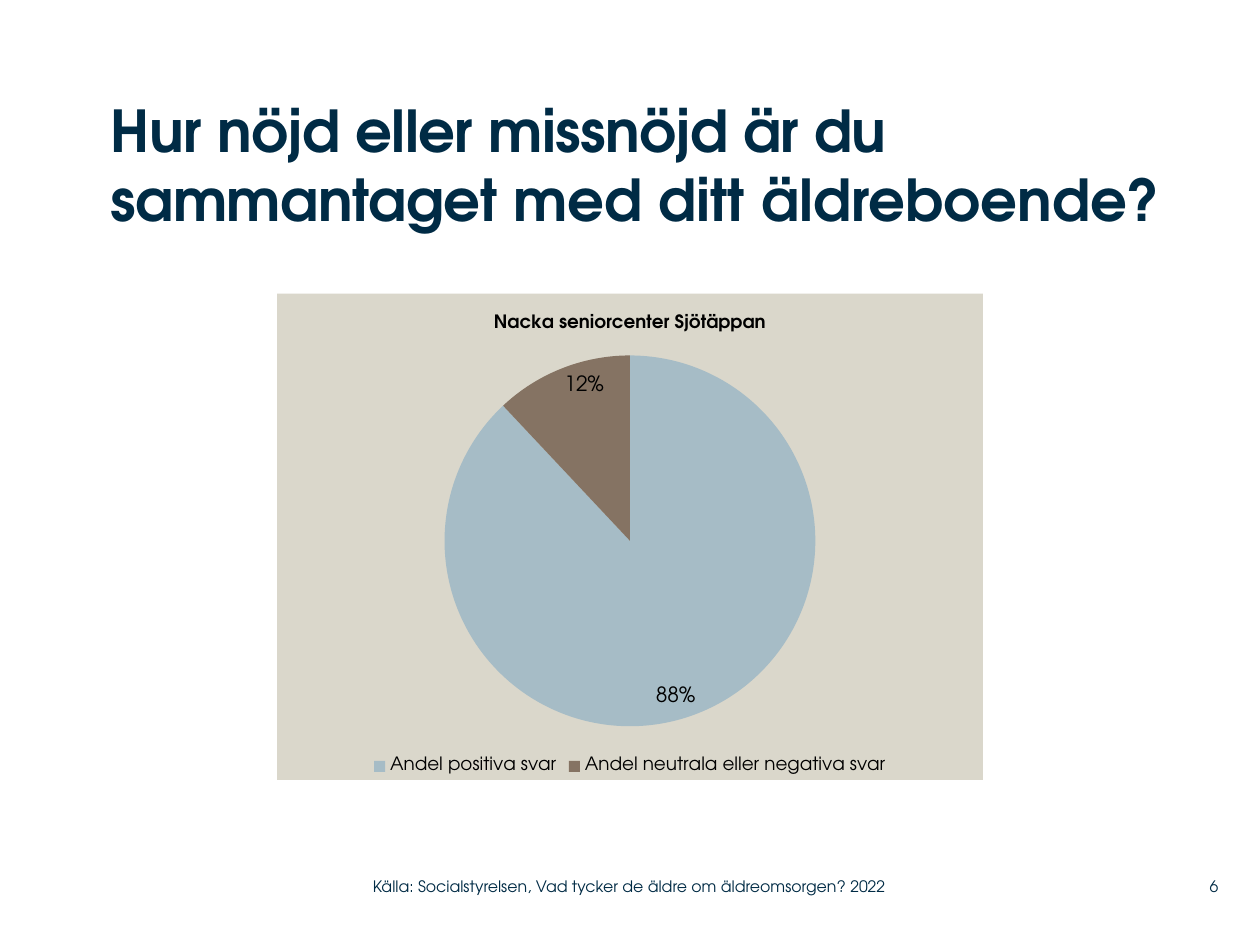
from pptx import Presentation
from pptx.chart.data import CategoryChartData
from pptx.dml.color import RGBColor
from pptx.enum.chart import XL_CHART_TYPE as ChartType, XL_LABEL_POSITION as LabelPos, XL_LEGEND_POSITION as LegendPos
from pptx.enum.text import MSO_ANCHOR as Anchor, MSO_AUTO_SIZE as AutoSize, PP_ALIGN as Align
from pptx.oxml import parse_xml
from pptx.oxml.ns import nsdecls
from pptx.util import Inches, Pt

FONT = "TeX Gyre Adventor"
COLORS = {"ink": "002B45", "black": "000000", "panel": "DAD7CB",
          "positive": "A6BCC6", "other": "857363"}
SLIDE_W, SLIDE_H = Inches(10), Inches(7.5)
FOOTER_TOP, FOOTER_H = Inches(6.89), Inches(0.29)


def color(name):
    return RGBColor.from_string(COLORS[name])


def style(font, size, name="ink", bold=False):
    font.name, font.size, font.bold = FONT, Pt(size), bold
    font.color.rgb = color(name)


def prepare(frame, anchor):
    frame.word_wrap, frame.auto_size = True, AutoSize.NONE
    frame.vertical_anchor = anchor
    frame.margin_left = frame.margin_right = frame.margin_top = frame.margin_bottom = 0


def add_run(paragraph, text, size, **look):
    run = paragraph.add_run()
    run.text = text
    style(run.font, size, **look)
    return run


def fill_title(title):
    title.left, title.top = Inches(0.88), SLIDE_H // 10
    title.width, title.height = Inches(8.83), Inches(1.42)
    prepare(title.text_frame, Anchor.TOP)
    heading = title.text_frame.paragraphs[0]
    heading.alignment = Align.LEFT
    opening = add_run(heading, "Hur nöjd eller missnöjd är du sammantaget ", 33, bold=True)
    opening.font._element.set("spc", "-30")
    add_run(heading, "med ditt äldreboende?", 33, bold=True)


def add_footer(slide, text, left, width, align=Align.LEFT):
    box = slide.shapes.add_textbox(Inches(left), FOOTER_TOP, Inches(width), FOOTER_H)
    prepare(box.text_frame, Anchor.MIDDLE)
    line = box.text_frame.paragraphs[0]
    line.alignment = align
    add_run(line, text, 9)


def add_pie(slide):
    answers = CategoryChartData(number_format="0")
    answers.categories = ["Andel positiva svar", "Andel neutrala eller negativa svar"]
    answers.add_series("Series 1", (88, 12))
    width = Inches(5.6)
    chart = slide.shapes.add_chart(ChartType.PIE, (SLIDE_W - width) // 2, Inches(2.33),
                                   width, Inches(3.86), answers).chart
    style(chart.font, 18, "black")

    heading = chart.chart_title.text_frame.paragraphs[0]
    add_run(heading, "Nacka seniorcenter Sjötäppan", 10.5, name="black", bold=True)

    chart.has_legend = True
    chart.legend.position = LegendPos.BOTTOM
    chart.legend.include_in_layout = False
    style(chart.legend.font, 10.5, "black")

    plot = chart.plots[0]
    plot.vary_by_categories = True
    pie = plot.series[0]
    for index, name in enumerate(("positive", "other")):
        slice_fill = pie.points[index].format.fill
        slice_fill.solid()
        slice_fill.fore_color.rgb = color(name)

    labels = pie.data_labels
    labels.show_percentage, labels.show_value = True, False
    labels.number_format, labels.number_format_is_linked = "0%", False
    labels.position = LabelPos.INSIDE_END
    style(labels.font, 12, "black")

    panel = parse_xml(
        f'<c:spPr {nsdecls("c", "a")}><a:solidFill><a:srgbClr val="{COLORS["panel"]}"/>'
        '</a:solidFill><a:ln><a:noFill/></a:ln></c:spPr>')
    chart._chartSpace.chart.addnext(panel)


def main():
    deck = Presentation()
    deck.slide_width, deck.slide_height = SLIDE_W, SLIDE_H
    slide = deck.slides.add_slide(deck.slide_layouts[5])
    fill_title(slide.shapes.title)
    add_footer(slide, "Källa: Socialstyrelsen, Vad tycker de äldre om äldreomsorgen? 2022", 2.96, 4.43)
    add_pie(slide)
    add_footer(slide, "6", 9.2, 0.47, Align.RIGHT)
    deck.save("out.pptx")


if __name__ == "__main__":
    main()
